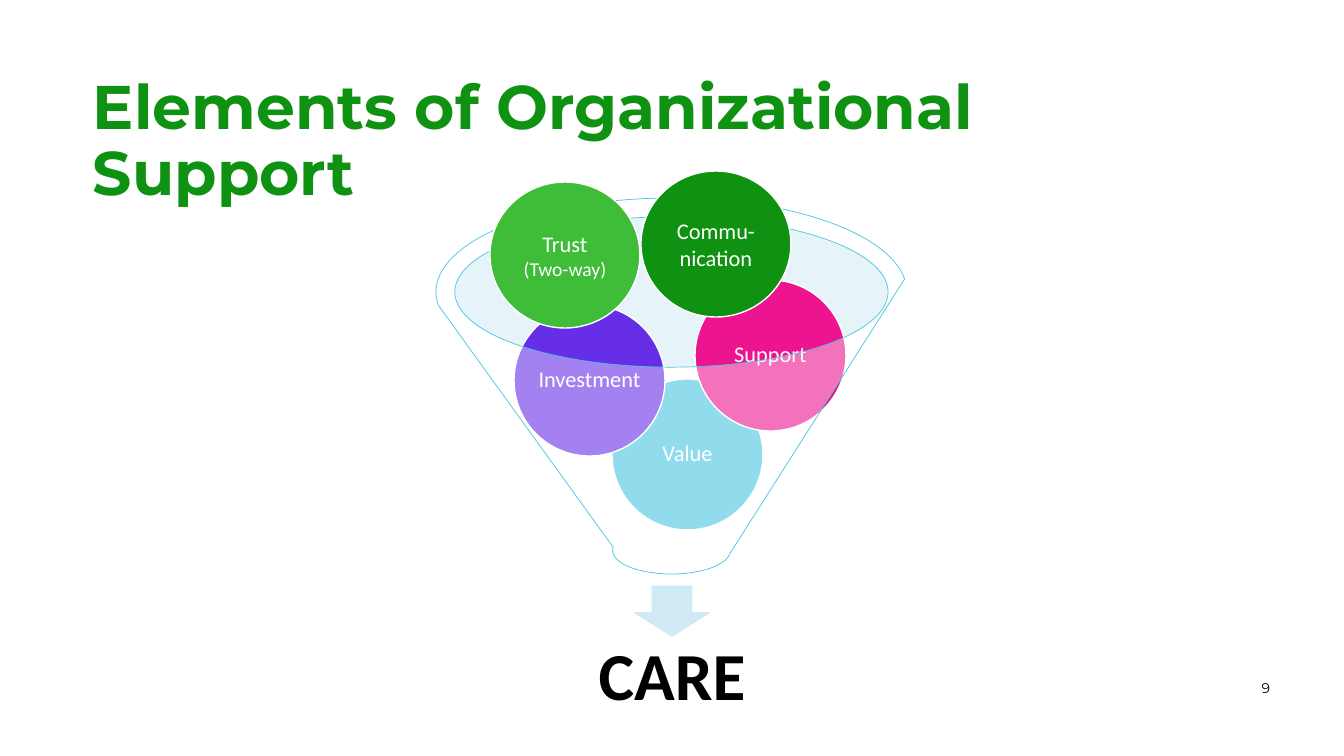
from lxml import etree
from pptx import Presentation
from pptx.dml.color import RGBColor
from pptx.enum.shapes import MSO_SHAPE as Shape
from pptx.enum.text import MSO_ANCHOR as Anchor, PP_ALIGN as Align
from pptx.oxml.ns import qn
from pptx.util import Pt

PX = 914400 / 100.8
COLORS = {
    "green": "0F9112", "light green": "3FBC38", "cyan": "47C5E2",
    "purple": "672EE7", "pink": "ED1490", "rim": "C1E4F1",
    "arrow": "CFEAF4", "white": "FFFFFF", "black": "000000",
}


def add_figure(kind, bounds, fill, line=None, weight=1, opacity=100):
    figure = slide.shapes.add_shape(kind, *[round(n * PX) for n in bounds])
    figure.shadow.inherit = False
    figure.fill.solid()
    figure.fill.fore_color.rgb = RGBColor.from_string(COLORS[fill])
    if opacity < 100:
        color = figure.fill._xPr.find(qn("a:solidFill"))[0]
        etree.SubElement(color, qn("a:alpha"), val=str(opacity * 1000))
    if line:
        figure.line.color.rgb = RGBColor.from_string(COLORS[line])
        figure.line.width = Pt(weight)
    else:
        figure.line.fill.background()
    return figure


def set_text(box, lines, sizes, font, color, align, anchor, insets, bold=False, spacing=1.0):
    frame = box.text_frame
    frame.word_wrap = True
    frame.vertical_anchor = anchor
    frame.margin_left, frame.margin_top, frame.margin_right, frame.margin_bottom = [
        round(n * PX) for n in insets]
    frame.text = lines
    for para, size in zip(frame.paragraphs, sizes):
        para.alignment = align
        para.line_spacing = spacing
        for span in para.runs:
            span.font.name = font
            span.font.size = Pt(size)
            span.font.bold = bold
            span.font.color.rgb = RGBColor.from_string(COLORS[color])


deck = Presentation()
deck.slide_width, deck.slide_height = round(1344 * PX), round(756 * PX)
slide = deck.slides.add_slide(deck.slide_layouts[6])

labels = [
    ((93, 76, 1159, 76), "Elements of Organizational Support", 44, "Montserrat",
     "green", Align.LEFT, Anchor.TOP, (0, 0, 0, 0), True, 0.9),
    ((1224, 667, 56, 42), "9", 10, "Montserrat",
     "black", Align.RIGHT, Anchor.MIDDLE, (0, 5, 10, 5), False, 1.0),
    ((291, 628, 762, 101), "CARE", 48, "Calibri",
     "black", Align.CENTER, Anchor.MIDDLE, (37, 37, 37, 37), True, 0.9),
]
for bounds, text, size, *style in labels:
    box = slide.shapes.add_textbox(*[round(n * PX) for n in bounds])
    set_text(box, text, [size], *style)

add_figure(Shape.OVAL, (455, 217, 433, 150), "rim", opacity=40)
add_figure(Shape.DOWN_ARROW, (630, 585, 84, 53), "arrow", "white")

inside = [
    ("Value", 612, 379, "cyan"),
    ("Investment", 514, 305, "purple"),
    ("Support", 695, 280, "pink"),
]
for text, left, top, fill in inside:
    circle = add_figure(Shape.OVAL, (left, top, 151, 151), fill, "white")
    set_text(circle, text, [16], "Calibri", "white", Align.CENTER, Anchor.MIDDLE,
             (2, 2, 2, 2), spacing=0.9)

add_figure(Shape.FUNNEL, (436, 198, 471, 376), "white", "cyan", 0.5, 40)

above = [
    ("Trust\n(Two-way)", 490, 182, "light green"),
    ("Commu-nication", 641, 171, "green"),
]
for text, left, top, fill in above:
    circle = add_figure(Shape.OVAL, (left, top, 150, 146), fill, "white")
    set_text(circle, text, [16, 14], "Calibri", "white", Align.CENTER, Anchor.MIDDLE,
             (10, 5, 10, 5))

deck.save("out.pptx")
